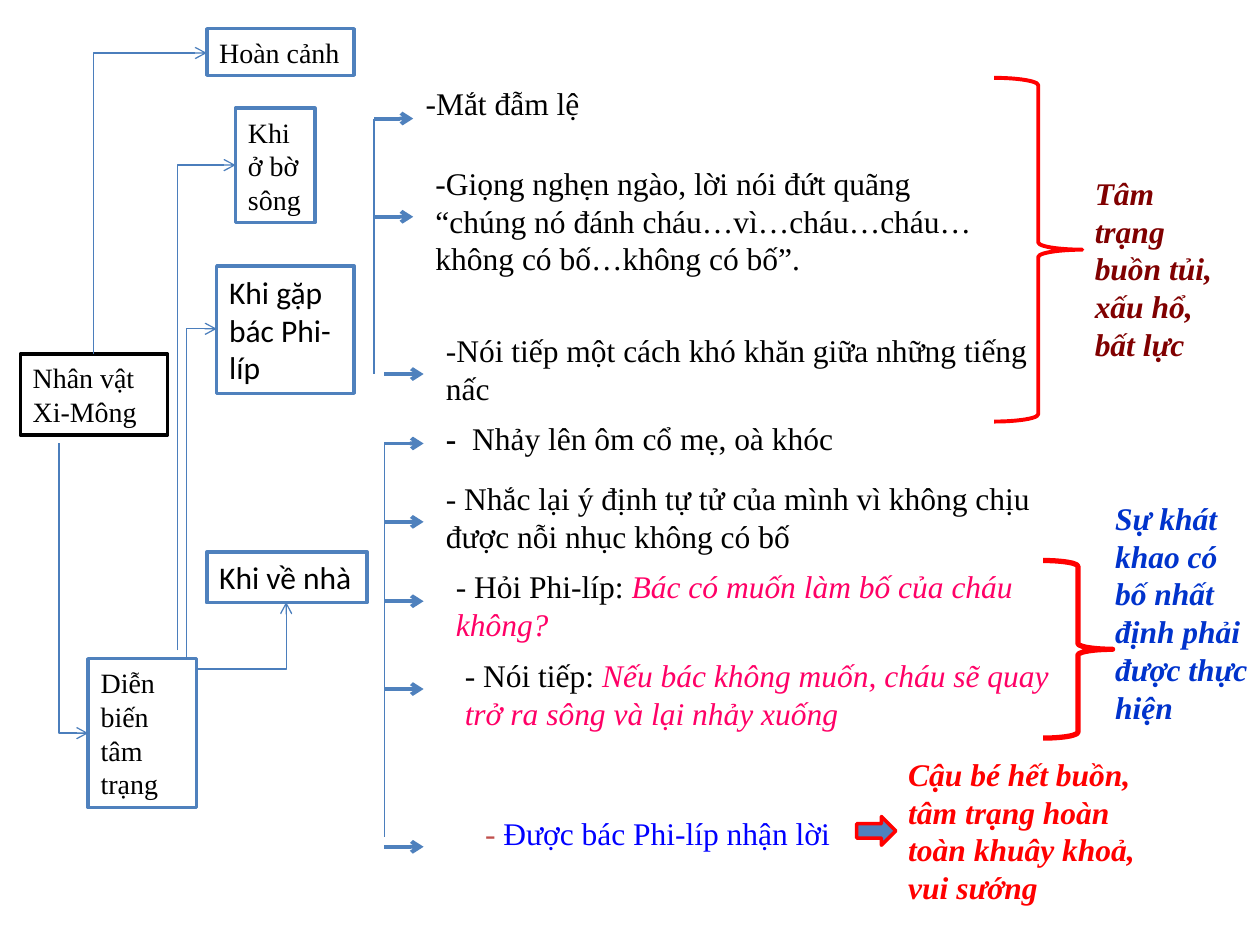
from lxml import etree
from pptx import Presentation
from pptx.dml.color import RGBColor
from pptx.enum.shapes import MSO_CONNECTOR, MSO_SHAPE
from pptx.enum.text import MSO_ANCHOR, MSO_AUTO_SIZE, PP_ALIGN
from pptx.oxml.ns import qn
from pptx.util import Cm, Pt

STRAIGHT, ELBOW = MSO_CONNECTOR.STRAIGHT, MSO_CONNECTOR.ELBOW
RECT, BRACE, ARROW = MSO_SHAPE.RECTANGLE, MSO_SHAPE.RIGHT_BRACE, MSO_SHAPE.RIGHT_ARROW
LEFT, TOP, MIDDLE = PP_ALIGN.LEFT, MSO_ANCHOR.TOP, MSO_ANCHOR.MIDDLE
FIT = MSO_AUTO_SIZE.SHAPE_TO_FIT_TEXT
SERIF, SANS = "Times New Roman", "Calibri"
COLORS = {
    "black": "000000", "white": "FFFFFF", "accent": "4F81BD", "line": "4B7EBC",
    "red": "FF0000", "maroon": "800000", "royal": "0033CC", "blue": "0000FF",
    "pink": "FF0066", "brick": "C0504D",
}


class MindMap:
    """Hold the shared style and draw each kind of element on the current slide."""

    def __init__(self, slide):
        self.s = slide

    def color(self, name):
        return RGBColor.from_string(COLORS[name])

    def shape(self, kind, at, line, width, fill=None):
        sp = self.s.shapes.add_shape(kind, *map(Cm, at))
        sp.shadow.inherit = False
        if fill:
            sp.fill.solid()
            sp.fill.fore_color.rgb = self.color(fill)
        else:
            sp.fill.background()
        sp.line.color.rgb = self.color(line)
        sp.line.width = Pt(width)
        return sp

    def add_runs(self, sp, paragraphs, size=18, font=SERIF, wrap=True, anchor=TOP):
        tf = sp.text_frame
        tf.word_wrap = wrap
        tf.auto_size = FIT
        tf.vertical_anchor = anchor
        for i, runs in enumerate(paragraphs):
            p = tf.add_paragraph() if i else tf.paragraphs[0]
            p.alignment = LEFT
            for text, color, bold, italic in runs:
                r = p.add_run()
                r.text = text
                r.font.size = Pt(size)
                r.font.name = font
                r.font.bold = bold
                r.font.italic = italic
                r.font.color.rgb = self.color(color)

    def box(self, at, lines, size=16, font=SERIF, line="accent", wrap=True):
        sp = self.shape(RECT, at, line, 2, "white")
        paragraphs = [[(text, "black", False, False)] for text in lines]
        self.add_runs(sp, paragraphs, size, font, wrap, MIDDLE)

    def text(self, at, *runs, wrap=True):
        sp = self.s.shapes.add_textbox(*map(Cm, at))
        self.add_runs(sp, [runs], wrap=wrap)

    def line(self, kind, ends, color="line", width=0.75, arrow=True):
        cxn = self.s.shapes.add_connector(kind, *map(Cm, ends))
        cxn.line.color.rgb = self.color(color)
        cxn.line.width = Pt(width)
        spPr = cxn._element.spPr
        if arrow:
            etree.SubElement(spPr.find(qn("a:ln")), qn("a:tailEnd"), type="arrow")
        etree.SubElement(spPr, qn("a:effectLst"))
        return cxn

    def elbow(self, x1, y1, x2, y2, vertical_first=True):
        ends, turn = (x1, y1, x2, y2), 0
        if vertical_first:
            cx, cy = (x1 + x2) / 2, (y1 + y2) / 2
            half_w, half_h = abs(y2 - y1) / 2, (x2 - x1) / 2
            turn = 90 if y2 < y1 else 270
            if y2 > y1:
                half_h = -half_h
            ends = (cx + half_w, cy + half_h, cx - half_w, cy - half_h)
        spPr = self.line(ELBOW, ends)._element.spPr
        spPr.find(qn("a:prstGeom")).set("prst", "bentConnector2")
        if turn:
            spPr.find(qn("a:xfrm")).set("rot", str(turn * 60000))

    def branch(self, x, top, bottom, arrows):
        self.line(STRAIGHT, (x, top, x, bottom), arrow=False)
        for left, y in arrows:
            self.line(STRAIGHT, (left, y, left + 0.79, y), "accent", 2.25)


def main():
    prs = Presentation()
    prs.slide_width, prs.slide_height = Cm(25.4), Cm(19.05)
    m = MindMap(prs.slides.add_slide(prs.slide_layouts[6]))

    m.box((0.41, 7.14, 2.97, 1.63), ["Nhân vật", "Xi-Mông"], line="black")
    m.box((1.78, 13.28, 2.18, 3), ["Diễn biến tâm trạng"])
    m.box((4.75, 2.18, 1.6, 2.31), ["Khi ở bờ sông"])
    m.box((4.17, 0.58, 2.97, 0.94), ["Hoàn cảnh"], wrap=False)
    m.box((4.37, 5.36, 2.77, 2.57), ["Khi gặp bác Phi-líp"], 18, SANS)
    m.box((4.17, 11.13, 3.23, 1.02), ["Khi về nhà"], 18, SANS, wrap=False)

    for ends in [
        (1.88, 7.14, 4.17, 1.07),
        (1.19, 8.94, 1.78, 14.78),
        (3.58, 13.11, 4.75, 3.33),
        (3.76, 13.28, 4.37, 6.63),
    ]:
        m.elbow(*ends)
    m.elbow(3.96, 13.49, 5.77, 12.14, vertical_first=False)

    m.branch(7.54, 2.39, 7.54, [(7.54, 2.39), (7.54, 4.37), (7.75, 7.54)])
    m.branch(7.75, 8.94, 16.87, [(7.75, y) for y in (8.94, 10.52, 12.12, 13.89, 17.07)])

    for at, text, wrap in [
        ((8.33, 1.57, 3.66, 1.02), "-Mắt đẫm lệ", False),
        ((8.53, 3.18, 11.51, 3.33),
         "-Giọng nghẹn ngào, lời nói đứt quãng “chúng nó đánh "
         "cháu…vì…cháu…cháu…không có bố…không có bố”.", True),
        ((8.74, 6.55, 12.7, 1.8), "-Nói tiếp một cách khó khăn giữa những tiếng nấc", True),
        ((8.74, 9.53, 12.7, 1.8),
         "- Nhắc lại ý định tự tử của mình vì không chịu được nỗi nhục không có bố", True),
    ]:
        m.text(at, (text, "black", False, False), wrap=wrap)

    m.text((8.74, 8.33, 8.41, 1.02), ("-  ", "black", True, False),
           ("Nhảy lên ôm cổ mẹ, oà khóc", "black", False, False), wrap=False)
    for at, lead, quote in [
        ((8.94, 11.3, 12.7, 1.8), "- Hỏi Phi-líp: ", "Bác có muốn làm bố của cháu không?"),
        ((9.12, 13.11, 12.7, 1.8), "- Nói tiếp: ",
         "Nếu bác không muốn, cháu sẽ quay trở ra sông và lại nhảy xuống"),
    ]:
        m.text(at, (lead, "black", False, False), (quote, "pink", False, True))
    m.text((9.53, 16.28, 7.75, 1.02), ("- ", "brick", False, False),
           ("Được bác Phi-líp nhận lời", "blue", False, False))

    m.shape(BRACE, (20.04, 1.57, 1.78, 6.93), "red", 2.25)
    m.shape(BRACE, (21.03, 11.3, 1.4, 3.58), "red", 3)
    m.shape(ARROW, (17.27, 16.46, 0.79, 0.58), "red", 2, "accent")

    for at, text, color in [
        ((21.82, 3.38, 2.97, 4.11), "Tâm trạng buồn tủi, xấu hổ, bất lực", "maroon"),
        ((22.23, 9.93, 3.18, 4.88),
         "Sự khát khao có bố nhất định phải được thực hiện", "royal"),
        ((18.06, 15.09, 5.56, 3.33),
         "Cậu bé hết buồn, tâm trạng hoàn toàn khuây khoả, vui sướng", "red"),
    ]:
        m.text(at, (text, color, True, True))

    prs.save("out.pptx")


if __name__ == "__main__":
    main()
